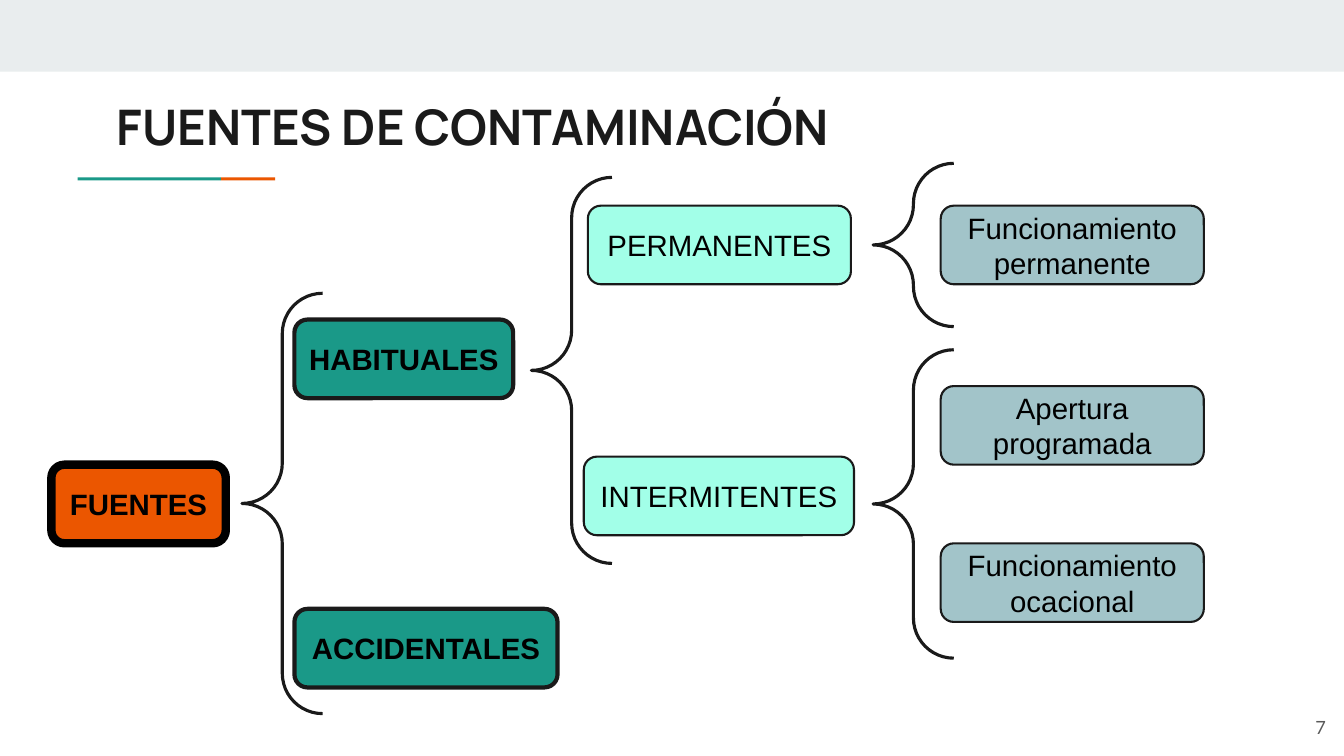
from pptx import Presentation
from pptx.dml.color import RGBColor
from pptx.enum.shapes import MSO_SHAPE as Shape
from pptx.enum.text import MSO_ANCHOR as Anchor, PP_ALIGN as Align
from pptx.util import Pt

EMU_PER_PX = 9144
COLORS = {
    "band": "E9EDEE",
    "orange": "EB5600",
    "teal": "1A9988",
    "mint": "A2FFE8",
    "steel": "A2C4C9",
    "ink": "1A1A1A",
    "black": "000000",
    "gray": "595959",
}
BOX_HEIGHT = 78
BRACE_WIDTH = 80
STYLES = {
    "root": ("orange", "black", 6, True),
    "kind": ("teal", "ink", 3, True),
    "mode": ("mint", "ink", 1.5, False),
    "detail": ("steel", "ink", 1.5, False),
}
SOURCES = [
    ("FUENTES", "root", 51, 461, 173),
    ("HABITUALES", "kind", 292, 317, 217),
    ("ACCIDENTALES", "kind", 292, 604, 261),
    ("PERMANENTES", "mode", 583, 204, 261),
    ("INTERMITENTES", "mode", 579, 453, 268),
    ("Funcionamiento permanente", "detail", 933, 204, 261),
    ("Apertura programada", "detail", 933, 383, 261),
    ("Funcionamiento ocacional", "detail", 933, 539, 261),
]
BRACES = [(240, 291, 417), (527, 176, 383), (866, 347, 306), (866, 162, 162)]


def px(*lengths):
    """Turn px lengths into EMU."""
    return [length * EMU_PER_PX for length in lengths]


def rgb(name):
    """Look up a colour of the palette."""
    return RGBColor.from_string(COLORS[name])


def write(frame, text, font_name, size, color, bold=False, align=Align.LEFT, inset=5):
    """Fill a text frame with one formatted, vertically centred paragraph."""
    frame.word_wrap = True
    frame.vertical_anchor = Anchor.MIDDLE
    frame.margin_left, frame.margin_right = px(10, 10)
    frame.margin_top, frame.margin_bottom = px(inset, inset)
    frame.text = text
    paragraph = frame.paragraphs[0]
    paragraph.alignment = align
    font = paragraph.runs[0].font
    font.name, font.size, font.bold = font_name, Pt(size), bold
    font.color.rgb = rgb(color)


def add_label(slide, bounds, *text_style, **options):
    """Add a text box."""
    label = slide.shapes.add_textbox(*px(*bounds))
    write(label.text_frame, *text_style, **options)


def add_bar(slide, bounds, color):
    """Add a plain filled rectangle."""
    bar = slide.shapes.add_shape(Shape.RECTANGLE, *px(*bounds))
    bar.shadow.inherit = False
    bar.fill.solid()
    bar.fill.fore_color.rgb = rgb(color)
    bar.line.fill.background()


def add_source(slide, text, style, left, top, width):
    """Add a rounded box naming one source of pollution."""
    fill, outline, weight, bold = STYLES[style]
    source = slide.shapes.add_shape(
        Shape.ROUNDED_RECTANGLE, *px(left, top, width, BOX_HEIGHT))
    source.shadow.inherit = False
    source.fill.solid()
    source.fill.fore_color.rgb = rgb(fill)
    source.line.color.rgb = rgb(outline)
    source.line.width = Pt(weight)
    write(source.text_frame, text, "Arial", 21, "black", bold, Align.CENTER, inset=10)


def add_brace(slide, left, top, height):
    """Add a left brace that opens a branch."""
    brace = slide.shapes.add_shape(
        Shape.LEFT_BRACE, *px(left, top, BRACE_WIDTH, height))
    brace.shadow.inherit = False
    brace.adjustments[0] = 0.5
    brace.adjustments[1] = 0.5
    brace.fill.background()
    brace.line.color.rgb = rgb("ink")
    brace.line.width = Pt(2.25)


def main():
    """Build the slide and save it."""
    deck = Presentation()
    deck.slide_width, deck.slide_height = px(1333, 750)
    slide = deck.slides.add_slide(deck.slide_layouts[6])
    add_bar(slide, (0, 0, 1333, 71), "band")
    add_bar(slide, (219, 176, 54, 3), "orange")
    add_bar(slide, (77, 176, 142, 3), "teal")
    add_label(slide, (106, 77, 1121, 96), "FUENTES DE CONTAMINACIÓN",
              "Manrope", 35, "ink", bold=True)
    add_label(slide, (1245, 693, 80, 57), "7", "Lato", 13, "gray", align=Align.RIGHT)
    for brace in BRACES:
        add_brace(slide, *brace)
    for source in SOURCES:
        add_source(slide, *source)
    deck.save("out.pptx")


if __name__ == "__main__":
    main()
